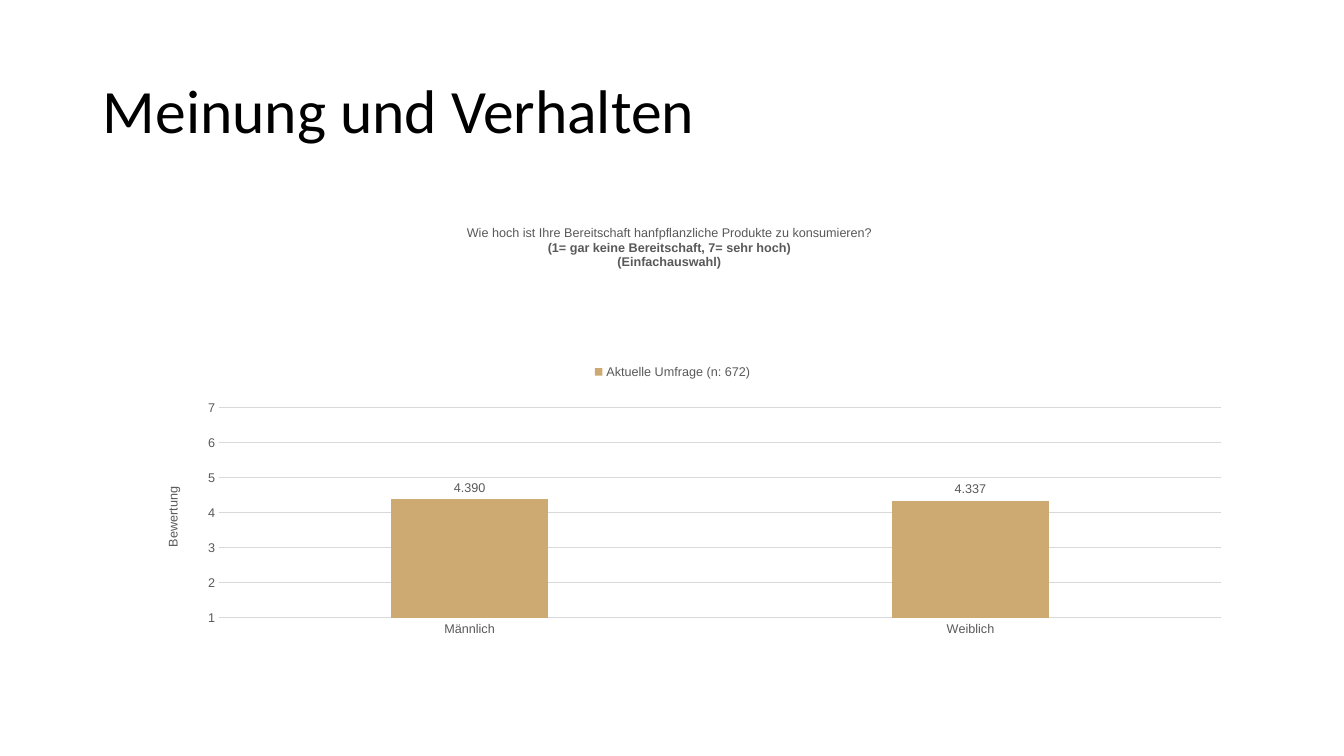
from lxml import etree
from pptx import Presentation
from pptx.chart.data import CategoryChartData
from pptx.dml.color import RGBColor
from pptx.enum.chart import XL_CHART_TYPE, XL_LABEL_POSITION, XL_LEGEND_POSITION, XL_TICK_MARK
from pptx.enum.text import MSO_ANCHOR, PP_ALIGN
from pptx.util import Inches, Pt

COLUMNS = XL_CHART_TYPE.COLUMN_CLUSTERED
OUTSIDE = XL_LABEL_POSITION.OUTSIDE_END
TOP = XL_LEGEND_POSITION.TOP
NO_TICK = XL_TICK_MARK.NONE
MIDDLE = MSO_ANCHOR.MIDDLE
LEFT = PP_ALIGN.LEFT
CENTER = PP_ALIGN.CENTER
GREY, GRID, TAN = "595959", "D9D9D9", "CCAA72"
C = "{http://schemas.openxmlformats.org/drawingml/2006/chart}"


def color(value):
    return RGBColor.from_string(value)


def place(parent, index, **values):
    """Give a chart part a manual layout in fractions of the chart."""
    for old in parent.findall(C + "layout"):
        parent.remove(old)
    layout = etree.Element(C + "layout")
    manual = etree.SubElement(layout, C + "manualLayout")
    for name, value in values.items():
        etree.SubElement(manual, C + name, val=str(value))
    parent.insert(index, layout)


prs = Presentation()
prs.slide_width, prs.slide_height = Inches(13.33), Inches(7.5)
s = prs.slides.add_slide(prs.slide_layouts[5])

# Slide title
title = s.shapes.title
box = {"left": 0.92, "top": 0.4, "width": 11.5, "height": 1.45}
for name, value in box.items():
    setattr(title, name, Inches(value))
tf = title.text_frame
tf.text = "Meinung und Verhalten"
tf.vertical_anchor = MIDDLE
p = tf.paragraphs[0]
p.alignment, p.line_spacing = LEFT, 0.9
p.font.name, p.font.size = "Calibri", Pt(44)
p.font.color.rgb = color("000000")

# Chart
data = CategoryChartData(number_format="#,##0.000")
data.categories = ["Männlich", "Weiblich"]
data.add_series("Aktuelle Umfrage (n: 672)", [4.39, 4.337])
chart = s.shapes.add_chart(COLUMNS, Inches(0.92), Inches(2), Inches(11.5), Inches(4.76), data).chart
chart.font.name, chart.font.size = "Arial", Pt(9)
chart.font.color.rgb = color(GREY)

# Columns and value labels
plot = chart.plots[0]
plot.gap_width, plot.overlap, plot.vary_by_categories = 219, -27, False
fill = plot.series[0].format.fill
fill.solid()
fill.fore_color.rgb = color(TAN)
plot.has_data_labels = True
labels = plot.data_labels
label_format = {"show_value": True, "position": OUTSIDE,
                "number_format": "#,##0.000", "number_format_is_linked": False}
for name, value in label_format.items():
    setattr(labels, name, value)

# Axes
cat_axis, val_axis = chart.category_axis, chart.value_axis
for axis in (cat_axis, val_axis):
    axis.major_tick_mark = axis.minor_tick_mark = NO_TICK
axis_format = {"minimum_scale": 1, "maximum_scale": 7, "major_unit": 1, "has_major_gridlines": True}
for name, value in axis_format.items():
    setattr(val_axis, name, value)
val_axis.tick_labels.number_format = "General"
val_axis.tick_labels.number_format_is_linked = False
for line in (cat_axis.format.line, val_axis.major_gridlines.format.line):
    line.color.rgb = color(GRID)
    line.width = Pt(0.75)
val_axis.format.line.fill.background()

# Chart title and axis title
question = [
    ("Wie hoch ist Ihre Bereitschaft hanfpflanzliche Produkte zu konsumieren?", False),
    ("(1= gar keine Bereitschaft, 7= sehr hoch)", True),
    ("(Einfachauswahl)", True),
]
chart.has_title = True
titles = [(chart.chart_title.text_frame, question),
          (val_axis.axis_title.text_frame, [("Bewertung", False)])]
for tf, lines in titles:
    for i, (text, bold) in enumerate(lines):
        p = tf.add_paragraph() if i else tf.paragraphs[0]
        p.alignment = CENTER
        r = p.add_run()
        r.text = text
        r.font.name, r.font.size, r.font.bold = "Arial", Pt(9), bold
        r.font.color.rgb = color(GREY)
turned = tf._txBody.bodyPr
turned.set("rot", "-5400000")
turned.set("vert", "horz")

# Legend
chart.has_legend = True
chart.legend.position = TOP
chart.legend.include_in_layout = False

# Positions inside the chart
root = chart._chartSpace.chart
area = root.find(C + "plotArea")
place(area, 0, layoutTarget="inner", xMode="edge", yMode="edge", x=0.109, y=0.43, w=0.864, h=0.438)
place(root.find(C + "title"), 1, xMode="edge", yMode="edge", x=0.32, y=0.04)
place(area.find(C + "valAx").find(C + "title"), 1, xMode="edge", yMode="edge", x=0.06, y=0.59)
place(root.find(C + "legend"), 1, xMode="edge", yMode="edge", x=0.43, y=0.33, w=0.14, h=0.05)

prs.save("out.pptx")
